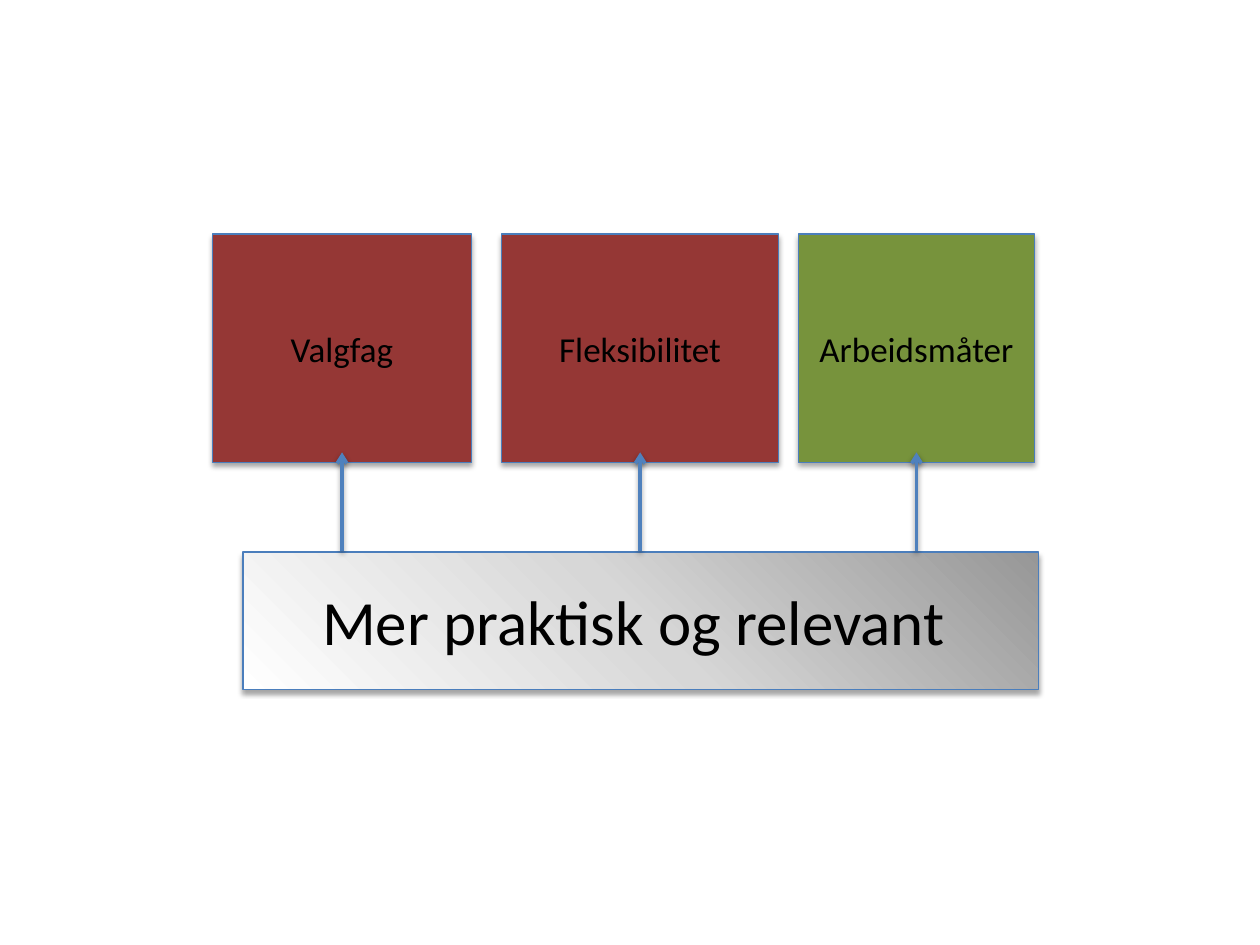
import lxml.etree
import pptx
import pptx.dml.color
import pptx.enum.shapes
import pptx.enum.text
import pptx.oxml.ns
import pptx.util

Cm = pptx.util.Cm
qn = pptx.oxml.ns.qn

THEME = {
    "font": "Calibri",
    "text": "000000",
    "red": "953735",
    "green": "77933C",
    "outline": "4B7EBC",
    "arrow": "4F81BD",
    "gradient": [(0, "979797"), (50, "D7D7D7"), (100, "FFFFFF")],
    "gradient_angle": 135,
    "pillar_size": 20,
    "base_size": 36,
}

PILLARS = [
    ("Valgfag", 4.29, 5.21, "red"),
    ("Fleksibilitet", 10.11, 5.59, "red"),
    ("Arbeidsmåter", 16.1, 4.75, "green"),
]
PILLAR_TOP, PILLAR_HEIGHT = 4.72, 4.6
BASE_TEXT = "Mer praktisk og relevant "
BASE_AREA = (4.9, 11.13, 16.03, 2.77)
ARROW_START, ARROW_END = 11.1, 9.12


def color(name):
    return pptx.dml.color.RGBColor.from_string(THEME[name])


def add_element(parent, tag, **attributes):
    element = lxml.etree.SubElement(parent, qn(tag))
    for key, value in attributes.items():
        element.set(key, str(value))
    return element


def add_shadow(effects, opacity, distance):
    shadow = add_element(
        effects, "a:outerShdw", blurRad=pptx.util.Pt(3.1),
        dist=pptx.util.Pt(distance), dir=90 * 60000, rotWithShape=0)
    tone = add_element(shadow, "a:srgbClr", val=THEME["text"])
    add_element(tone, "a:alpha", val=opacity * 1000)


def fill_gradient(box):
    box.fill.gradient()
    gradient = box.fill._xPr.find(qn("a:gradFill"))
    for child in list(gradient):
        gradient.remove(child)
    stops = add_element(gradient, "a:gsLst")
    for position, tone in THEME["gradient"]:
        stop = add_element(stops, "a:gs", pos=position * 1000)
        add_element(stop, "a:srgbClr", val=tone)
    add_element(gradient, "a:lin", ang=THEME["gradient_angle"] * 60000, scaled=0)


def write(box, text, *, size):
    frame = box.text_frame
    frame.word_wrap = True
    frame.vertical_anchor = pptx.enum.text.MSO_ANCHOR.MIDDLE
    para = frame.paragraphs[0]
    para.alignment = pptx.enum.text.PP_ALIGN.CENTER
    span = para.add_run()
    span.text = text
    span.font.name = THEME["font"]
    span.font.size = pptx.util.Pt(THEME[size])
    span.font.color.rgb = color("text")


def add_box(page, area, fill=None):
    box = page.shapes.add_shape(
        pptx.enum.shapes.MSO_SHAPE.FLOWCHART_PROCESS, *map(Cm, area))
    if fill:
        box.fill.solid()
        box.fill.fore_color.rgb = color(fill)
    else:
        fill_gradient(box)
    box.line.color.rgb = color("outline")
    box.line.width = pptx.util.Pt(0.75)
    box.shadow.inherit = False
    add_shadow(box._element.spPr.find(qn("a:effectLst")), 35, 1.8)
    return box


def add_arrow(page, x):
    arrow = page.shapes.add_connector(
        pptx.enum.shapes.MSO_CONNECTOR.STRAIGHT,
        Cm(x), Cm(ARROW_START), Cm(x), Cm(ARROW_END))
    arrow.line.color.rgb = color("arrow")
    arrow.line.width = pptx.util.Pt(2)
    add_element(arrow.line._get_or_add_ln(), "a:tailEnd", type="arrow")
    add_shadow(add_element(arrow._element.spPr, "a:effectLst"), 38, 1.6)


def main():
    deck = pptx.Presentation()
    deck.slide_width, deck.slide_height = Cm(25.4), Cm(19.05)
    page = deck.slides.add_slide(deck.slide_layouts[6])
    for text, left, width, fill in PILLARS:
        box = add_box(page, (left, PILLAR_TOP, width, PILLAR_HEIGHT), fill)
        write(box, text, size="pillar_size")
    write(add_box(page, BASE_AREA), BASE_TEXT, size="base_size")
    for _, left, width, _ in PILLARS:
        add_arrow(page, left + width / 2)
    deck.save("out.pptx")


if __name__ == "__main__":
    main()
